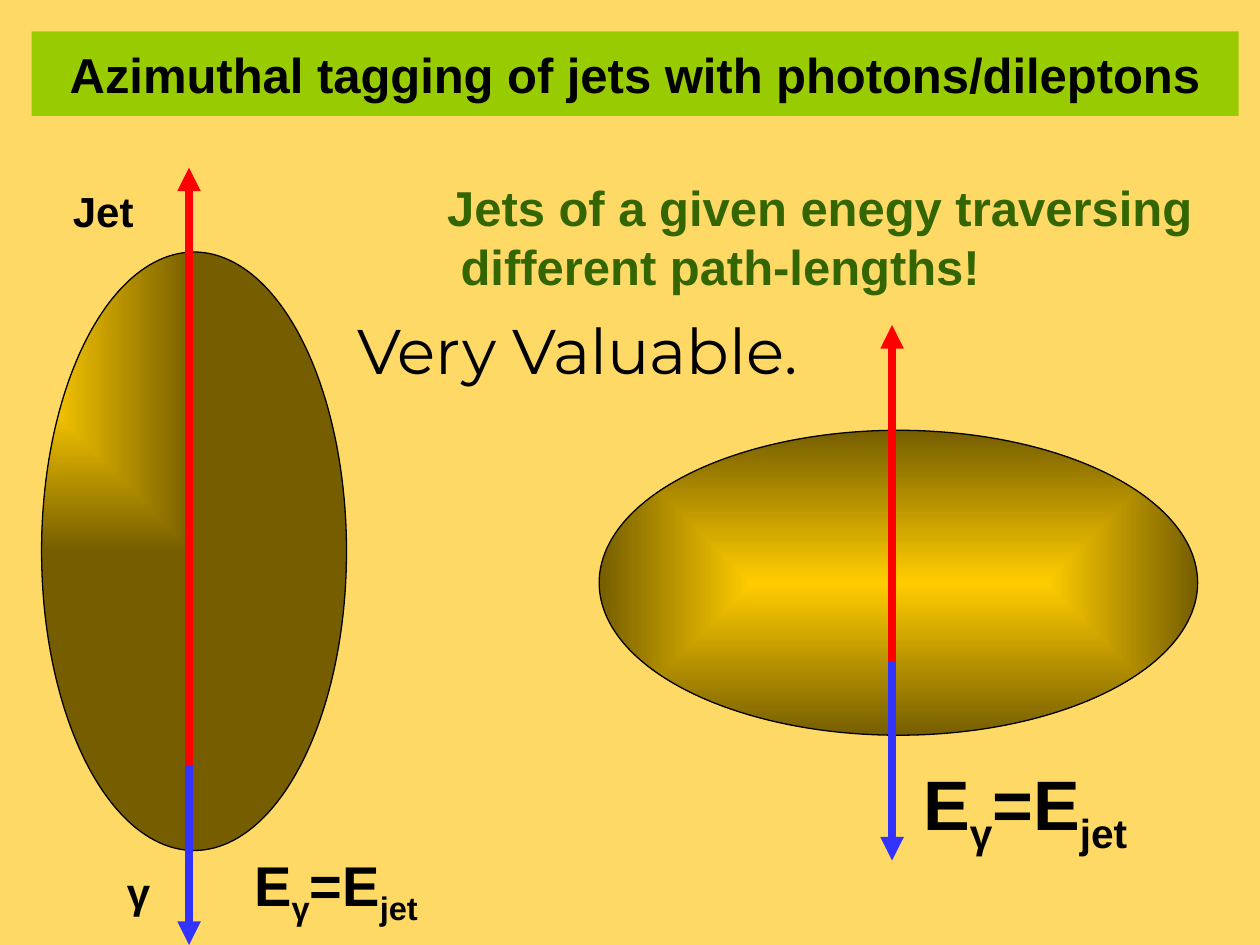
import pptx
import pptx.dml.color
import pptx.enum.shapes
import pptx.enum.text
import pptx.oxml
import pptx.oxml.ns
import pptx.util
from lxml import etree

Inches, Pt = pptx.util.Inches, pptx.util.Pt
SHAPE = pptx.enum.shapes.MSO_SHAPE
ALIGN = pptx.enum.text.PP_ALIGN
ANCHOR = pptx.enum.text.MSO_ANCHOR
qn = pptx.oxml.ns.qn

BLACK, RED, BLUE, GREEN = "000000", "FF0000", "3333FF", "336600"
TITLE = "Azimuthal tagging of jets with photons/dileptons"
ENERGY = [[("E", 0), ("γ", -25), ("=E", 0), ("jet", -25)]]
CLAIM = [[("Jets of a given enegy traversing", 0)],
         [(" different path-lengths!", 0)]]

OVALS = [
    (0.33, 2, 0, "rect", (0, 0, 100, 100)),
    (5.92, 2.25, 270, "shape", (50, 50, 50, 50)),
]
ARROWS = [
    (1.5, 6.08, 1.33, RED),
    (7.08, 5.25, 2.58, RED),
    (1.5, 6.08, 7.5, BLUE),
    (7.08, 5.25, 6.83, BLUE),
]
LABELS = [
    ((1.92, 6.7, 1.52, 0.63), ENERGY, 32, BLACK, "Arial", True, ALIGN.LEFT),
    ((7.23, 5.99, 1.86, 0.77), ENERGY, 40, BLACK, "Arial", True, ALIGN.LEFT),
    ((3.45, 1.36, 6.13, 1.03), CLAIM, 28, GREEN, "Arial", True, ALIGN.LEFT),
    ((2.67, 2.42, 3.83, 1), [[("Very Valuable.", 0)]], 36, BLACK,
     "Montserrat", False, ALIGN.CENTER),
    ((0.48, 1.42, 0.68, 0.5), [[("Jet", 0)]], 24, BLACK, "Arial", True, ALIGN.LEFT),
    ((0.91, 6.83, 0.34, 0.5), [[("γ", 0)]], 24, BLACK, "Arial", True, ALIGN.LEFT),
]


def color(text):
    return pptx.dml.color.RGBColor.from_string(text)


def paint(fill, text):
    fill.solid()
    fill.fore_color.rgb = color(text)


def write(frame, paras, size, tint, face, bold, align):
    frame.word_wrap = False
    for i, runs in enumerate(paras):
        para = frame.paragraphs[0] if i == 0 else frame.add_paragraph()
        para.alignment = align
        for text, base in runs:
            run = para.add_run()
            run.text = text
            run.font.size = Pt(size)
            run.font.name = face
            run.font.bold = bold
            run.font.color.rgb = color(tint)
            if base:
                run.font._element.set("baseline", str(base * 1000))


def shade(shape, kind, focus):
    fill = shape.fill
    fill.gradient()
    for stop, tint in zip(fill.gradient_stops, ("FFCC00", "765E00")):
        stop.color.rgb = color(tint)
    grad = shape._element.spPr.find(qn("a:gradFill"))
    grad.remove(grad.find(qn("a:lin")))
    way = etree.SubElement(grad, qn("a:path"), {"path": kind})
    sides = {k: str(v * 1000) for k, v in zip("ltrb", focus)}
    etree.SubElement(way, qn("a:fillToRect"), sides)


def add_oval(slide, left, top, turn, kind, focus):
    oval = slide.shapes.add_shape(
        SHAPE.OVAL, Inches(left), Inches(top), Inches(2.42), Inches(4.75))
    oval.shadow.inherit = False
    oval.rotation = turn
    shade(oval, kind, focus)
    oval.line.color.rgb = color(BLACK)
    oval.line.width = Pt(0.75)


def add_arrow(slide, x, start, end, tint):
    arrow = slide.shapes.add_connector(
        pptx.enum.shapes.MSO_CONNECTOR.STRAIGHT,
        Inches(x), Inches(start), Inches(x), Inches(end))
    arrow.line.color.rgb = color(tint)
    arrow.line.width = Pt(4.5)
    prop = arrow._element.spPr
    etree.SubElement(prop.find(qn("a:ln")), qn("a:tailEnd"), {"type": "triangle"})
    etree.SubElement(prop, qn("a:effectLst"))


def main():
    deck = pptx.Presentation()
    deck.slide_width, deck.slide_height = Inches(10), Inches(7.5)
    slide = deck.slides.add_slide(deck.slide_layouts[6])
    paint(slide.background.fill, "FFD966")

    title = slide.shapes.add_shape(
        SHAPE.RECTANGLE, Inches(0.25), Inches(0.25), Inches(9.58), Inches(0.67))
    title.shadow.inherit = False
    paint(title.fill, "99CC00")
    title.line.fill.background()
    title.text_frame.vertical_anchor = ANCHOR.MIDDLE
    write(title.text_frame, [[(TITLE, 0)]], 28, BLACK, "Arial", True, ALIGN.CENTER)

    for oval in OVALS:
        add_oval(slide, *oval)
    for arrow in ARROWS:
        add_arrow(slide, *arrow)
    for place, *style in LABELS:
        box = slide.shapes.add_textbox(*map(Inches, place))
        write(box.text_frame, *style)

    deck.save("out.pptx")


if __name__ == "__main__":
    main()
